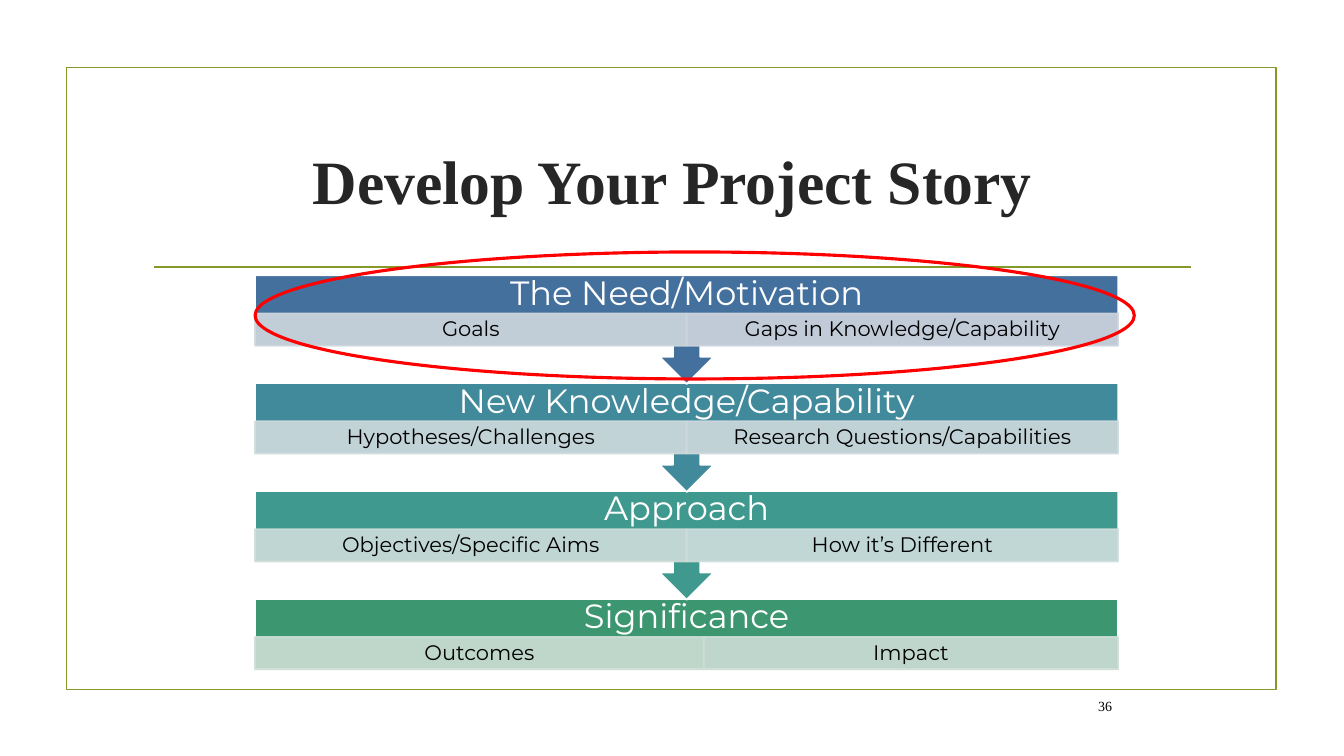
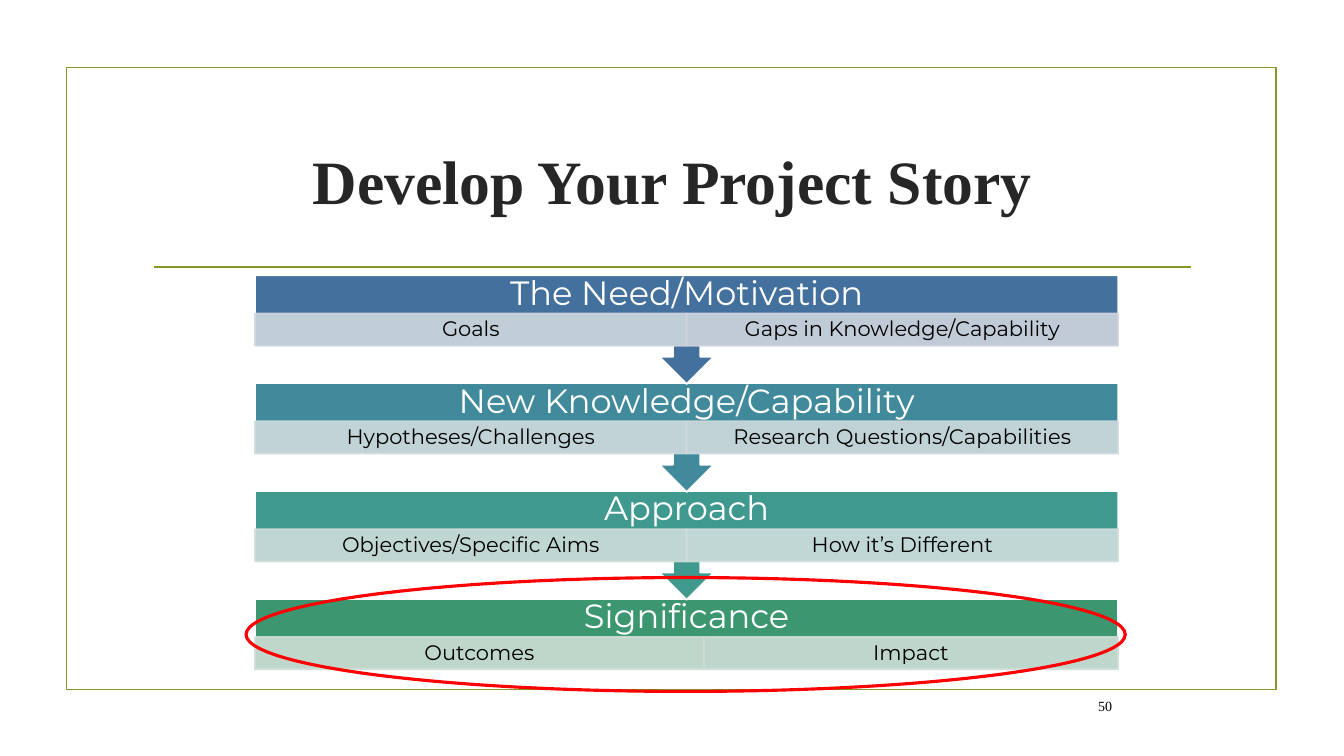
from dataclasses import dataclass

from lxml.etree import SubElement
from pptx import Presentation
from pptx.dml.color import RGBColor
from pptx.enum.shapes import MSO_CONNECTOR as Connector, MSO_SHAPE as Preset
from pptx.enum.text import MSO_ANCHOR as Anchor, PP_ALIGN as Align
from pptx.oxml.ns import qn
from pptx.util import Inches, Pt

SLIDE_WIDTH, SLIDE_HEIGHT = 13.33, 7.5
OLIVE, RED, WHITE, BLACK, CHARCOAL = "83992A", "FF0000", "FFFFFF", "000000", "262626"
SERIF, SANS = "Times New Roman", "Montserrat"
THIN, THICK = 1.25, 2.25

STAGE_LEFT, STAGE_TOP, STAGE_WIDTH = 2.53, 2.73, 8.56
STAGE_PITCH = 1.07
HEADING_HEIGHT, CELL_HEIGHT = 0.38, 0.32
ARROW_HEIGHT = 1.08


@dataclass(frozen=True)
class Box:
    left: float
    top: float
    width: float
    height: float

    def lengths(self) -> tuple:
        return tuple(Inches(v) for v in (self.left, self.top, self.width, self.height))


@dataclass(frozen=True)
class Cell:
    text: str
    color: str


@dataclass(frozen=True)
class Stage:
    heading: str
    color: str
    left_cell: Cell
    right_cell: Cell
    split: float = 0.5


@dataclass(frozen=True)
class StorySlide:
    number: int
    highlight: Box


STAGES = [
    Stage("The Need/Motivation", "44709D",
          Cell("Goals", "CFD8DE"), Cell("Gaps in Knowledge/Capability", "CFD5DF")),
    Stage("New Knowledge/Capability", "418A9B",
          Cell("Hypotheses/Challenges", "CFDCDE"),
          Cell("Research Questions/Capabilities", "CFDADE")),
    Stage("Approach", "3F998E",
          Cell("Objectives/Specific Aims", "CFDDDA"), Cell("How it’s Different", "CFDEDD")),
    Stage("Significance", "3C9770",
          Cell("Outcomes", "CEDDD5"), Cell("Impact", "CEDDD8"), split=0.52),
]

STORY_SLIDES = [
    StorySlide(36, Box(2.53, 2.5, 8.72, 1.26)),
    StorySlide(50, Box(2.44, 5.73, 8.72, 1.13)),
]


def rgb(color: str) -> RGBColor:
    return RGBColor.from_string(color)


def write(shape, text: str, *, font: str, size: float, color: str, bold: bool = False,
          align=Align.CENTER, spacing: float = 1.0, insets: tuple = (0.1, 0.05)) -> None:
    frame = shape.text_frame
    frame.word_wrap = True
    frame.vertical_anchor = Anchor.MIDDLE
    frame.margin_left = frame.margin_right = Inches(insets[0])
    frame.margin_top = frame.margin_bottom = Inches(insets[1])
    paragraph = frame.paragraphs[0]
    paragraph.alignment = align
    paragraph.line_spacing = spacing
    run = paragraph.add_run()
    run.text = text
    run.font.name = font
    run.font.size = Pt(size)
    run.font.bold = bold
    run.font.color.rgb = rgb(color)


def add_preset(slide, preset, box: Box, *, fill: str = "", line: str = "",
               line_width: float = THIN, opacity: int = 100):
    shape = slide.shapes.add_shape(preset, *box.lengths())
    shape.shadow.inherit = False
    if fill:
        shape.fill.solid()
        shape.fill.fore_color.rgb = rgb(fill)
    else:
        shape.fill.background()
    if line:
        shape.line.color.rgb = rgb(line)
        shape.line.width = Pt(line_width)
    else:
        shape.line.fill.background()
    if opacity < 100:
        for color in shape._element.spPr.iter(qn("a:srgbClr")):
            SubElement(color, qn("a:alpha")).set("val", str(opacity * 1000))
    return shape


def add_rule(slide, left: float, right: float, top: float) -> None:
    rule = slide.shapes.add_connector(
        Connector.STRAIGHT, Inches(left), Inches(top), Inches(right), Inches(top))
    rule.line.color.rgb = rgb(OLIVE)
    rule.line.width = Pt(THIN)
    SubElement(rule._element.spPr, qn("a:effectLst"))


def add_frame(slide, number: int) -> None:
    add_preset(slide, Preset.RECTANGLE, Box(0.66, 0.67, 12, 6.17), line=OLIVE)
    add_rule(slide, 1.53, 11.81, 2.65)
    title = slide.shapes.title
    title.left, title.top, title.width, title.height = Box(1.42, 1.07, 10.5, 1.43).lengths()
    write(title, "Develop Your Project Story", font=SERIF, size=44, color=CHARCOAL, bold=True)
    badge = add_preset(slide, Preset.OVAL, Box(10.42, 6.75, 0.83, 0.5))
    write(badge, str(number), font=SERIF, size=10, color=BLACK, align=Align.RIGHT)


def add_stage(slide, stage: Stage, row: int) -> None:
    top = STAGE_TOP + row * STAGE_PITCH
    if row == len(STAGES) - 1:
        box = Box(STAGE_LEFT, top, STAGE_WIDTH, HEADING_HEIGHT + CELL_HEIGHT)
        add_preset(slide, Preset.RECTANGLE, box, fill=stage.color, line=WHITE)
    else:
        box = Box(STAGE_LEFT, top, STAGE_WIDTH, ARROW_HEIGHT)
        callout = add_preset(slide, Preset.UP_ARROW_CALLOUT, box, fill=stage.color, line=WHITE)
        callout.rotation = 180

    heading = slide.shapes.add_textbox(
        *Box(STAGE_LEFT, top, STAGE_WIDTH, HEADING_HEIGHT).lengths())
    write(heading, stage.heading, font=SANS, size=24, color=WHITE, spacing=0.9, insets=(0.19, 0))

    left = STAGE_LEFT
    for cell, share in ((stage.left_cell, stage.split), (stage.right_cell, 1 - stage.split)):
        width = STAGE_WIDTH * share
        shape = add_preset(slide, Preset.RECTANGLE,
                           Box(left, top + HEADING_HEIGHT, width, CELL_HEIGHT),
                           fill=cell.color, line=cell.color, opacity=90)
        write(shape, cell.text, font=SANS, size=15, color=BLACK, spacing=0.9, insets=(0.12, 0.02))
        left += width


def main() -> None:
    presentation = Presentation()
    presentation.slide_width = Inches(SLIDE_WIDTH)
    presentation.slide_height = Inches(SLIDE_HEIGHT)
    title_only = presentation.slide_layouts.get_by_name("Title Only")
    for story in STORY_SLIDES:
        slide = presentation.slides.add_slide(title_only)
        add_frame(slide, story.number)
        for row, stage in reversed(list(enumerate(STAGES))):
            add_stage(slide, stage, row)
        add_preset(slide, Preset.OVAL, story.highlight, line=RED, line_width=THICK)
    presentation.save("out.pptx")


if __name__ == "__main__":
    main()
